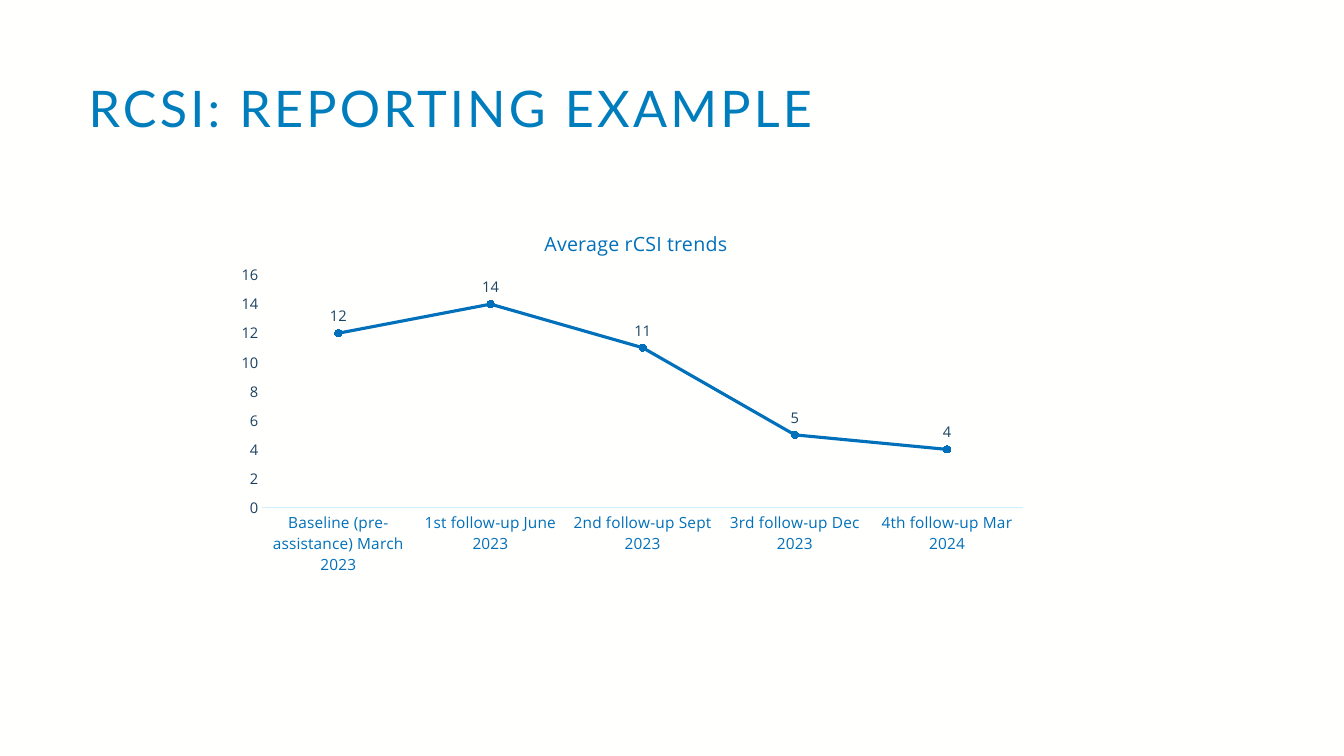
"""Build the rCSI reporting slide with its trend chart."""
from lxml import etree
from pptx import Presentation
from pptx import util as u
from pptx.chart.data import CategoryChartData
from pptx.dml.color import RGBColor
from pptx.enum import chart as ch, text
from pptx.oxml import parse_xml
from pptx.oxml.ns import nsdecls, qn

TITLE = "RCSI: REPORTING EXAMPLE"
CHART_TITLE = "Average rCSI trends"
TRENDS = [
    ("Baseline (pre-assistance) March 2023", 12),
    ("1st follow-up June 2023", 14),
    ("2nd follow-up Sept 2023", 11),
    ("3rd follow-up Dec 2023", 5),
    ("4th follow-up Mar 2024", 4),
]
COLORS = {"bg": "FFFFFE", "title": "007DBC", "line": "0070BA",
          "text": "1A4161", "axis": "CFEFFF"}
HEAD, BODY = "Lato", "Open Sans"
TITLE_BOX = (0.78, 0.78, 12.09, 0.72)
CHART_BOX = (2.23, 2.06, 8.08, 3.72)
PLOT_SHARE = {"x": 0.046, "y": 0.18, "w": 0.934, "h": 0.62}
CAPTION_SHARE = {"x": 0.388, "y": 0.045}


def rgb(name):
    return RGBColor.from_string(COLORS[name])


def style(font, size, color, name=BODY):
    font.size, font.name, font.bold = u.Pt(size), name, False
    font.color.rgb = rgb(color)


def add_text(s, box, words, size, color, name, spacing=0, line=1.0):
    tf = s.shapes.add_textbox(*map(u.Inches, box)).text_frame
    tf.word_wrap = True
    tf.vertical_anchor = text.MSO_ANCHOR.TOP
    p = tf.paragraphs[0]
    p.line_spacing = line
    r = p.add_run()
    r.text = words
    style(r.font, size, color, name)
    r.font._element.set("spc", str(round(spacing * 100)))


def place(element, before, shares, inner=False):
    for old in element.findall(qn("c:layout")):
        element.remove(old)
    layout = parse_xml(f"<c:layout {nsdecls('c')}><c:manualLayout/></c:layout>")
    settings = {"layoutTarget": "inner"} if inner else {}
    settings |= {"xMode": "edge", "yMode": "edge", **shares}
    for tag, value in settings.items():
        etree.SubElement(layout[0], qn(f"c:{tag}")).set("val", str(value))
    element.find(qn(before)).addprevious(layout)


def add_trend_chart(s):
    data = CategoryChartData()
    data.categories = [name for name, _ in TRENDS]
    data.add_series("Series 1", [value for _, value in TRENDS])
    chart = s.shapes.add_chart(ch.XL_CHART_TYPE.LINE_MARKERS,
                               *map(u.Inches, CHART_BOX), data).chart
    style(chart.font, 10.5, "text")
    chart.has_legend = False
    chart.has_title = True
    tf = chart.chart_title.text_frame
    tf.text = CHART_TITLE
    style(tf.paragraphs[0].runs[0].font, 14, "line")
    chart.chart_title.include_in_layout = False
    place(chart.chart_title._element, "c:overlay", CAPTION_SHARE)
    place(chart._chartSpace.chart.plotArea, "c:lineChart", PLOT_SHARE, True)

    for axis, size, color in ((chart.category_axis, 11, "line"),
                              (chart.value_axis, 10.5, "text")):
        axis.has_major_gridlines = False
        axis.major_tick_mark = axis.minor_tick_mark = ch.XL_TICK_MARK.NONE
        style(axis.tick_labels.font, size, color)
    chart.category_axis.format.line.color.rgb = rgb("axis")
    chart.category_axis.format.line.width = u.Pt(0.75)
    values = chart.value_axis
    values.format.line.fill.background()
    values.minimum_scale, values.maximum_scale, values.major_unit = 0, 16, 2

    plot = chart.plots[0]
    plot.vary_by_categories = False
    series = plot.series[0]
    series.smooth = False
    series.format.line.color.rgb = rgb("line")
    series.format.line.width = u.Pt(2.25)
    marker = series.marker
    marker.style, marker.size = ch.XL_MARKER_STYLE.CIRCLE, 5
    marker.format.fill.solid()
    marker.format.fill.fore_color.rgb = rgb("line")
    marker.format.line.color.rgb = rgb("line")
    labels = series.data_labels
    labels.show_value = True
    labels.position = ch.XL_LABEL_POSITION.ABOVE
    style(labels.font, 10.5, "text")


def main():
    prs = Presentation()
    prs.slide_width, prs.slide_height = u.Inches(13.33), u.Inches(7.5)
    s = prs.slides.add_slide(prs.slide_layouts[6])
    s.background.fill.solid()
    s.background.fill.fore_color.rgb = rgb("bg")
    add_text(s, TITLE_BOX, TITLE, 36, "title", HEAD, spacing=2.3, line=0.9)
    add_trend_chart(s)
    prs.save("out.pptx")


if __name__ == "__main__":
    main()
